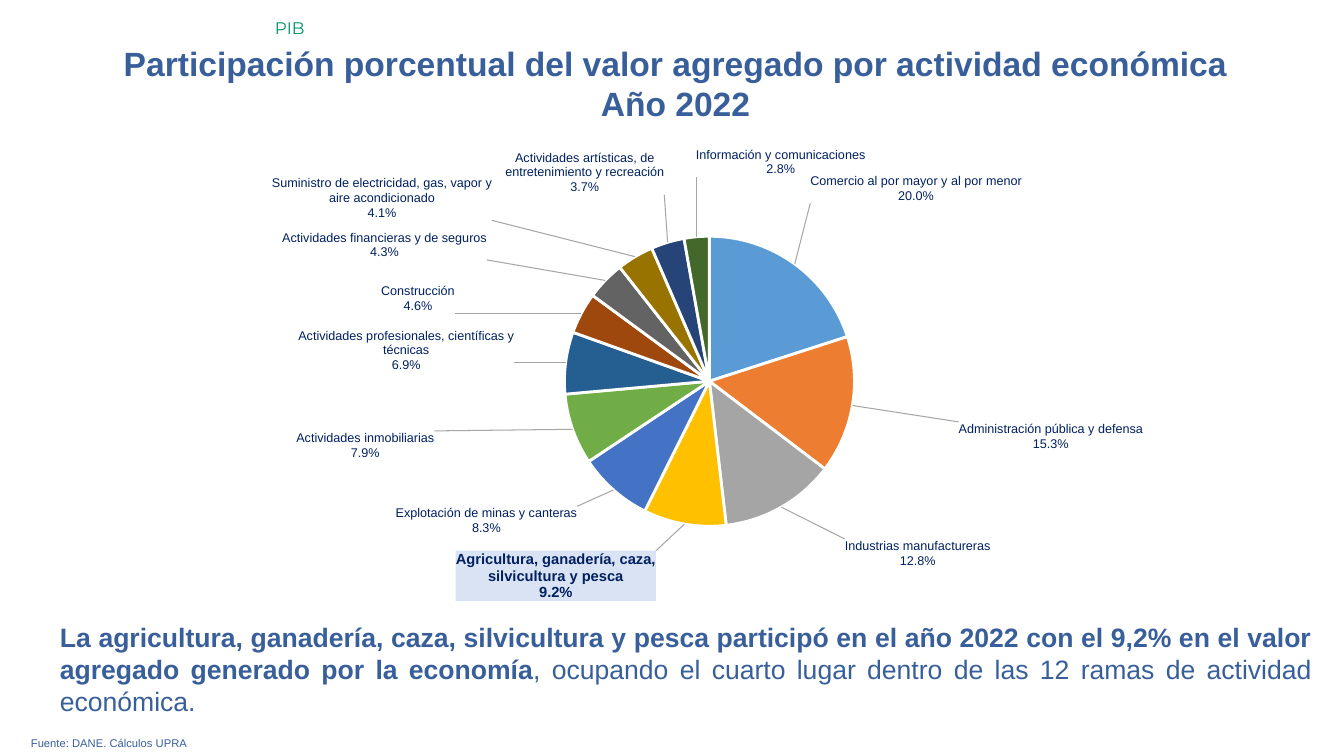
from math import cos, radians, sin

from lxml import etree
from pptx import Presentation
from pptx import oxml
from pptx import util as u
from pptx.chart.data import CategoryChartData
from pptx.dml.color import RGBColor
from pptx.enum import chart as charts
from pptx.enum import text
from pptx.oxml import ns

SCALE = 914400 / 100.8
COLOURS = {
    "heading": "395F9B", "tag": "009267", "label": "002060",
    "highlight": "DAE3F3", "leader": "A6A6A6", "white": "FFFFFF",
}
NUMBER_FORMAT = '0.0"%"'
LABEL_LINE = 14.5
PLOT = {"x": 0.184, "y": 0.201, "w": 0.699, "h": 0.612}
HIGHLIGHTED = 3

# category, value, slice colour, label left, top, width, lines
SECTORS = [
    ("Comercio al por mayor y al por menor", 20, "5B9BD5", 807, 179, 212, 2),
    ("Administración pública y defensa", 15.3, "ED7D31", 953, 421, 184, 2),
    ("Industrias manufactureras", 12.8, "A5A5A5", 842, 534, 146, 2),
    ("Agricultura, ganadería, caza, silvicultura y pesca", 9.2, "FFC000", 457, 545, 200, 3),
    ("Explotación de minas y canteras", 8.3, "4472C4", 400, 502, 181, 2),
    ("Actividades inmobiliarias", 7.9, "70AD47", 302, 429, 138, 2),
    ("Actividades profesionales, científicas y técnicas", 6.9, "255E91", 304, 330, 216, 3),
    ("Construcción", 4.6, "9E480E", 386, 287, 74, 2),
    ("Actividades financieras y de seguros", 4.3, "636363", 287, 235, 204, 2),
    ("Suministro de electricidad, gas, vapor y aire acondicionado", 4.1, "997300", 275, 182, 220, 3),
    ("Actividades artísticas, de entretenimiento y recreación", 3.7, "264478", 507, 157, 159, 3),
    ("Información y comunicaciones", 2.8, "43682B", 696, 154, 170, 2),
]


def px(length):
    return u.Emu(round(length * SCALE))


def rgb(name):
    return RGBColor.from_string(COLOURS[name])


def place(shape, box):
    shape.left, shape.top, shape.width, shape.height = map(px, box)


def set_font(font, size, colour, bold=False, name="Arial"):
    font.size, font.bold, font.name = u.Pt(size), bold, name
    font.color.rgb = rgb(colour)


def add_title(slide, box, lines):
    title = slide.shapes.title
    place(title, box)
    frame = title.text_frame
    frame.text = "\n".join(lines)
    frame.vertical_anchor = text.MSO_ANCHOR.TOP
    frame.auto_size = text.MSO_AUTO_SIZE.NONE
    for paragraph in frame.paragraphs:
        paragraph.alignment = text.PP_ALIGN.CENTER
        set_font(paragraph.font, 24, "heading", True)


def add_text(slide, box, runs, size, colour, alignment, name="Arial", indent=0):
    shape = slide.shapes.add_textbox(*map(px, box))
    shape.text_frame.word_wrap = True
    paragraph = shape.text_frame.paragraphs[0]
    paragraph.alignment = alignment
    if indent:
        paragraph._p.get_or_add_pPr().set("marL", str(px(indent)))
    set_font(paragraph.font, size, colour, name=name)
    for content, bold in runs:
        run = paragraph.add_run()
        run.text = content
        if bold:
            run.font.bold = True


def manual_layout(x, y, extra=""):
    return (f'<c:layout {ns.nsdecls("c")}><c:manualLayout>{extra}'
            f'<c:x val="{x:.4f}"/><c:y val="{y:.4f}"/>')


def plot_layout():
    modes = ('<c:layoutTarget val="inner"/><c:xMode val="edge"/>'
             '<c:yMode val="edge"/>')
    size = f'<c:w val="{PLOT["w"]}"/><c:h val="{PLOT["h"]}"/>'
    return oxml.parse_xml(manual_layout(PLOT["x"], PLOT["y"], modes) + size
                          + "</c:manualLayout></c:layout>")


def label_offset(box, middle, label):
    left, top, width, height = box
    label_left, label_top, label_width, label_height = label
    radius = min(width * PLOT["w"], height * PLOT["h"]) / 2
    anchor_x = left + width * (PLOT["x"] + PLOT["w"] / 2) + radius * sin(radians(middle))
    anchor_y = top + height * (PLOT["y"] + PLOT["h"] / 2) - radius * cos(radians(middle))
    default_left = anchor_x - (label_width if middle > 180 else 0)
    default_top = anchor_y - (0 if 90 < middle < 270 else label_height)
    return (label_left - default_left) / width, (label_top - default_top) / height


def point_label(index, offset):
    bold = index == HIGHLIGHTED
    fill = (f'<c:spPr><a:solidFill><a:srgbClr val="{COLOURS["highlight"]}"/>'
            '</a:solidFill></c:spPr>') if bold else ""
    layout = manual_layout(*offset) + "</c:manualLayout></c:layout>"
    return oxml.parse_xml(
        f'<c:dLbl {ns.nsdecls("c", "a")}><c:idx val="{index}"/>{layout}'
        f"<c:numFmt formatCode='{NUMBER_FORMAT}' sourceLinked='0'/>{fill}"
        f'<c:txPr><a:bodyPr/><a:p><a:pPr><a:defRPr sz="{1050 if bold else 900}" b="{int(bold)}">'
        f'<a:solidFill><a:srgbClr val="{COLOURS["label"]}"/></a:solidFill>'
        '<a:latin typeface="Arial"/></a:defRPr></a:pPr></a:p></c:txPr>'
        '<c:dLblPos val="bestFit"/><c:showLegendKey val="0"/><c:showVal val="1"/>'
        '<c:showCatName val="1"/><c:showSerName val="0"/><c:showPercent val="0"/>'
        '<c:showBubbleSize val="0"/><c:separator>\n</c:separator></c:dLbl>')


def add_labels(series, box):
    labels = series.data_labels
    labels.show_value = labels.show_category_name = True
    labels.number_format, labels.number_format_is_linked = NUMBER_FORMAT, False
    labels.position = charts.XL_LABEL_POSITION.BEST_FIT
    set_font(labels.font, 9, "label")
    element = labels._element
    for old in element.findall(ns.qn("c:showLeaderLines")):
        element.remove(old)
    etree.SubElement(element, ns.qn("c:separator")).text = "\n"
    etree.SubElement(element, ns.qn("c:showLeaderLines")).set("val", "1")
    element.append(oxml.parse_xml(
        f'<c:leaderLines {ns.nsdecls("c", "a")}><c:spPr><a:ln w="9525"><a:solidFill>'
        f'<a:srgbClr val="{COLOURS["leader"]}"/></a:solidFill></a:ln></c:spPr></c:leaderLines>'))
    total = sum(sector[1] for sector in SECTORS)
    start = 0
    for index, (_, value, _, left, top, width, lines) in enumerate(SECTORS):
        middle = (start + value / 2) / total * 360
        start += value
        height = 50 if index == HIGHLIGHTED else lines * LABEL_LINE
        offset = label_offset(box, middle, (left, top, width, height))
        element.insert(index, point_label(index, offset))


def add_pie(slide, box):
    data = CategoryChartData(number_format="0.0")
    data.categories = [sector[0] for sector in SECTORS]
    data.add_series("Series 1", [sector[1] for sector in SECTORS])
    chart = slide.shapes.add_chart(charts.XL_CHART_TYPE.PIE, *map(px, box), data).chart
    chart.has_legend = chart.has_title = False
    set_font(chart.font, 9, "label")
    plot = chart.plots[0]
    plot.vary_by_categories = True
    series = plot.series[0]
    for index, sector in enumerate(SECTORS):
        style = series.points[index].format
        style.fill.solid()
        style.fill.fore_color.rgb = RGBColor.from_string(sector[2])
        style.line.color.rgb = rgb("white")
        style.line.width = u.Pt(2)
    add_labels(series, box)
    plot_area = chart._chartSpace.chart.plotArea
    for old in plot_area.findall(ns.qn("c:layout")):
        plot_area.remove(old)
    plot_area.insert(0, plot_layout())


def build_slide(presentation):
    slide = presentation.slides.add_slide(presentation.slide_layouts[5])
    justify = text.PP_ALIGN.JUSTIFY
    add_title(slide, (45, 38, 1261, 92), [
        "Participación porcentual del valor agregado por actividad económica", "Año 2022"])
    add_text(slide, (21, 731, 1301, 24), [("Fuente: DANE. Cálculos UPRA", False)],
             8, "heading", justify)
    add_text(slide, (0, 616, 1322, 107), [
        ("La agricultura, ganadería, caza, silvicultura y pesca participó en el año 2022 "
         "con el 9,2% en el valor agregado generado por la economía", True),
        (", ocupando el cuarto lugar dentro de las 12 ramas de actividad económica.", False),
    ], 19, "heading", justify, indent=50)
    add_text(slide, (265, 13, 1079, 30), [("PIB", False)], 12, "tag",
             text.PP_ALIGN.LEFT, "Montserrat")
    add_pie(slide, (112, 141, 1120, 474))


def main():
    presentation = Presentation()
    presentation.slide_width, presentation.slide_height = px(1344), px(756)
    build_slide(presentation)
    presentation.save("out.pptx")


if __name__ == "__main__":
    main()
